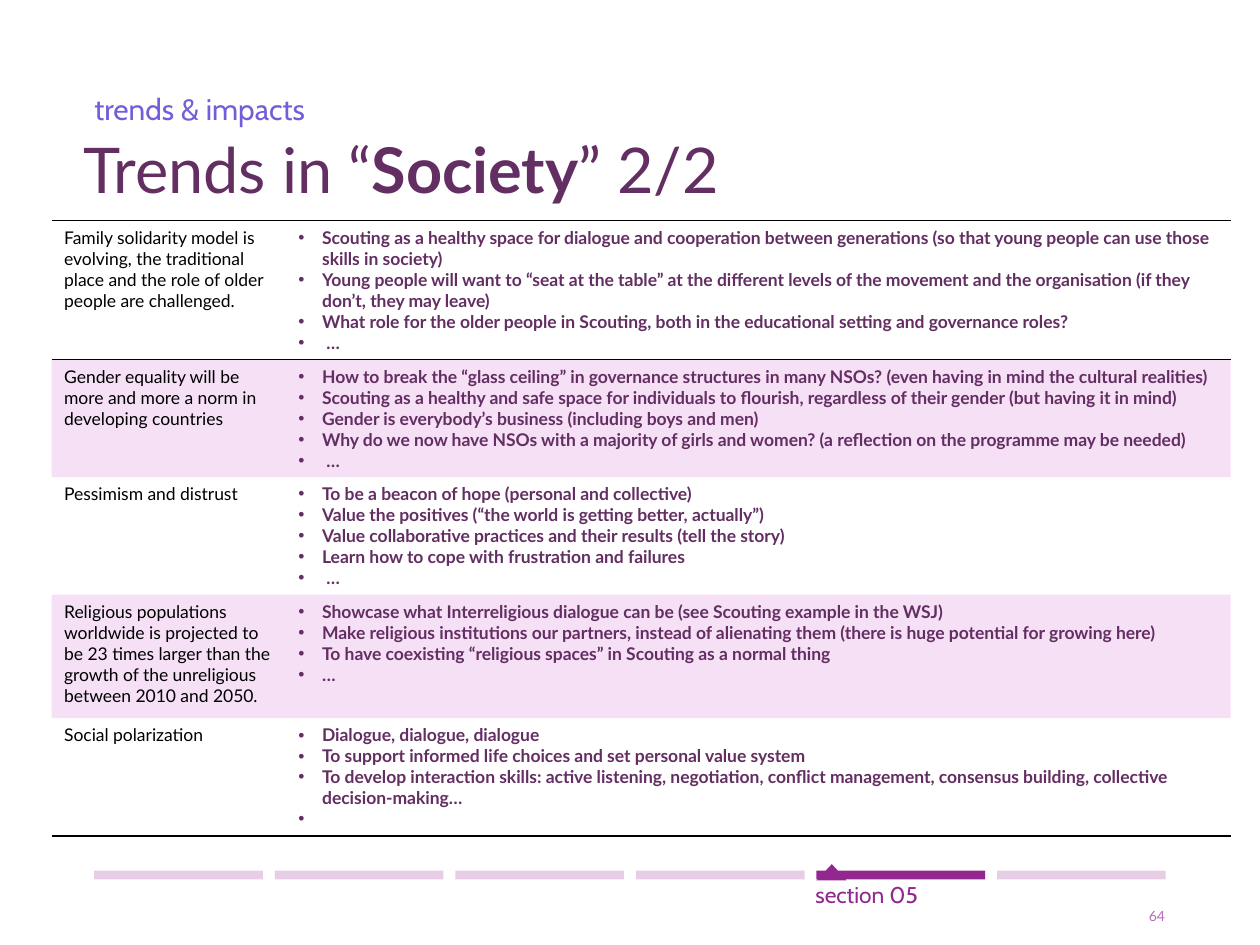
from lxml.etree import SubElement
from pptx import Presentation
from pptx.dml.color import RGBColor
from pptx.enum.shapes import MSO_SHAPE
from pptx.enum.text import MSO_ANCHOR, MSO_AUTO_SIZE, PP_ALIGN
from pptx.oxml import parse_xml
from pptx.oxml.ns import nsdecls, qn
from pptx.util import Cm, Pt

BLACK = RGBColor(0x00, 0x00, 0x00)
PLUM = RGBColor(0x63, 0x2E, 0x62)
VIOLET = RGBColor(0x75, 0x5D, 0xD9)
PINK = RGBColor(0xD6, 0x65, 0xD3)
PALE = RGBColor(0xE8, 0xCD, 0xE7)
PURPLE = RGBColor(0x92, 0x27, 0x8F)
MAUVE = RGBColor(0xBA, 0x69, 0xB8)
PLAIN = "{2D5ABB26-0587-4C30-8999-92F81FD0307C}"

ROWS = [
    (2.8, "Family solidarity model is evolving, the traditional place and the role of older people are challenged.", [
        "Scouting as a healthy space for dialogue and cooperation between generations (so that young people can use those skills in society)",
        "Young people will want to “seat at the table” at the different levels of the movement and the organisation (if they don’t, they may leave)",
        "What role for the older people in Scouting, both in the educational setting and governance roles?",
        " …"]),
    (2.37, "Gender equality will be more and more a norm in developing countries", [
        "How to break the “glass ceiling” in governance structures in many NSOs? (even having in mind the cultural realities)",
        "Scouting as a healthy and safe space for individuals to flourish, regardless of their gender (but having it in mind)",
        "Gender is everybody’s business (including boys and men)",
        "Why do we now have NSOs with a majority of girls and women? (a reflection on the programme may be needed)",
        " …"]),
    (2.37, "Pessimism and distrust", [
        "To be a beacon of hope (personal and collective)",
        "Value the positives (“the world is getting better, actually”)",
        "Value collaborative practices and their results (tell the story)",
        "Learn how to cope with frustration and failures",
        " …"]),
    (2.49, "Religious populations worldwide is projected to be 23 times larger than the growth of the unreligious between 2010 and 2050.", [
        "Showcase what Interreligious dialogue can be (see Scouting example in the WSJ)",
        "Make religious institutions our partners, instead of alienating them (there is huge potential for growing here)",
        "To have coexisting “religious spaces” in Scouting as a normal thing",
        "…"]),
    (2.37, "Social polarization", [
        "Dialogue, dialogue, dialogue",
        "To support informed life choices and set personal value system",
        "To develop interaction skills: active listening, negotiation, conflict management, consensus building, collective decision-making…",
        " "]),
]


def style(para, name, size, color, bold=False):
    for run in para.runs:
        font = run.font
        font.name, font.size, font.bold = name, Pt(size), bold
        font.color.rgb = color


def place(shape, left, top, width, height):
    shape.left, shape.top = Cm(left), Cm(top)
    shape.width, shape.height = Cm(width), Cm(height)
    frame = shape.text_frame
    frame.margin_left = frame.margin_right = 0
    frame.margin_top = frame.margin_bottom = 0
    frame.word_wrap = True
    frame.auto_size = MSO_AUTO_SIZE.NONE
    frame.vertical_anchor = MSO_ANCHOR.TOP
    return frame


prs = Presentation()
prs.slide_width, prs.slide_height = Cm(25.4), Cm(19.05)
slide = prs.slides.add_slide(prs.slide_layouts[1])
shapes = slide.shapes

frame = place(slide.placeholders[1], 1.9, 1.93, 21.59, 1.24)
frame.text = "trends & impacts"
para = frame.paragraphs[0]
props = para._p.get_or_add_pPr()
props.set("marL", "0")
props.set("indent", "0")
SubElement(props, qn("a:buNone"))
para.line_spacing = 0.85
para.space_before = Pt(0)
style(para, "Cabin", 17, VIOLET)

frame = place(shapes.title, 1.68, 2.87, 21.59, 2.54)
para = frame.paragraphs[0]
para.alignment = PP_ALIGN.LEFT
para.line_spacing = 0.85
for part in ("Trends in “", "Society", "” 2/2"):
    para.add_run().text = part
style(para, "Lato", 36, PLUM)
para.runs[1].font.bold = True

table = shapes.add_table(len(ROWS), 2, Cm(1.04), Cm(4.45), Cm(23.77), Cm(12.4)).table
table.first_row = table.horz_banding = False
table._tbl.tblPr.find(qn("a:tableStyleId")).text = PLAIN
table.columns[0].width, table.columns[1].width = Cm(4.72), Cm(19.05)

for num, (height, trend, points) in enumerate(ROWS):
    table.rows[num].height = Cm(height)
    left, right = table.cell(num, 0), table.cell(num, 1)
    left.text_frame.text = trend
    style(left.text_frame.paragraphs[0], "Lato", 10, BLACK)
    right.text_frame.text = "\n".join(points)
    for para in right.text_frame.paragraphs:
        props = para._p.get_or_add_pPr()
        props.set("marL", str(Cm(0.48)))
        props.set("indent", str(Cm(-0.48)))
        SubElement(props, qn("a:buFont"), typeface="Arial")
        SubElement(props, qn("a:buChar"), char="•")
        style(para, "Lato", 10, PLUM, True)
    edges = {0: ("lnB", "lnT"), len(ROWS) - 1: ("lnB",)}.get(num, ())
    for cell in (left, right):
        if num % 2:
            cell.fill.solid()
            cell.fill.fore_color.rgb = PINK
            tint = cell._tc.tcPr.find(".//" + qn("a:srgbClr"))
            SubElement(tint, qn("a:alpha"), val="20000")
        else:
            cell.fill.background()
        for edge in edges:
            cell._tc.tcPr.insert(0, parse_xml(
                f'<a:{edge} {nsdecls("a")} w="12700"><a:solidFill>'
                f'<a:srgbClr val="{BLACK}"/></a:solidFill></a:{edge}>'))

mark = shapes.add_group_shape()
for num in range(6):
    active = num == 4
    home = mark.shapes if active else shapes
    bar = home.add_shape(MSO_SHAPE.RECTANGLE, Cm(1.9 + 3.64 * num), Cm(17.55), Cm(3.4), Cm(0.18))
    bar.shadow.inherit = False
    bar.fill.solid()
    bar.fill.fore_color.rgb = PURPLE if active else PALE
    bar.line.fill.background()

build = mark.shapes.build_freeform(Cm(16.46), Cm(17.75))
build.add_line_segments([(Cm(16.77), Cm(17.42)), (Cm(17.07), Cm(17.75))])
tip = build.convert_to_shape()
tip.shadow.inherit = False
tip.fill.solid()
tip.fill.fore_color.rgb = PURPLE
tip.line.fill.background()

frame = place(shapes.add_textbox(0, 0, 0, 0), 16.44, 17.75, 3.4, 0.56)
frame.text = "section 05"
style(frame.paragraphs[0], "Cabin", 13, PURPLE)

frame = place(shapes.add_textbox(0, 0, 0, 0), 22.68, 18.31, 0.81, 0.33)
frame.text = "64"
frame.vertical_anchor = MSO_ANCHOR.BOTTOM
frame.paragraphs[0].alignment = PP_ALIGN.RIGHT
style(frame.paragraphs[0], "Lato", 8, MAUVE)

prs.save("out.pptx")
